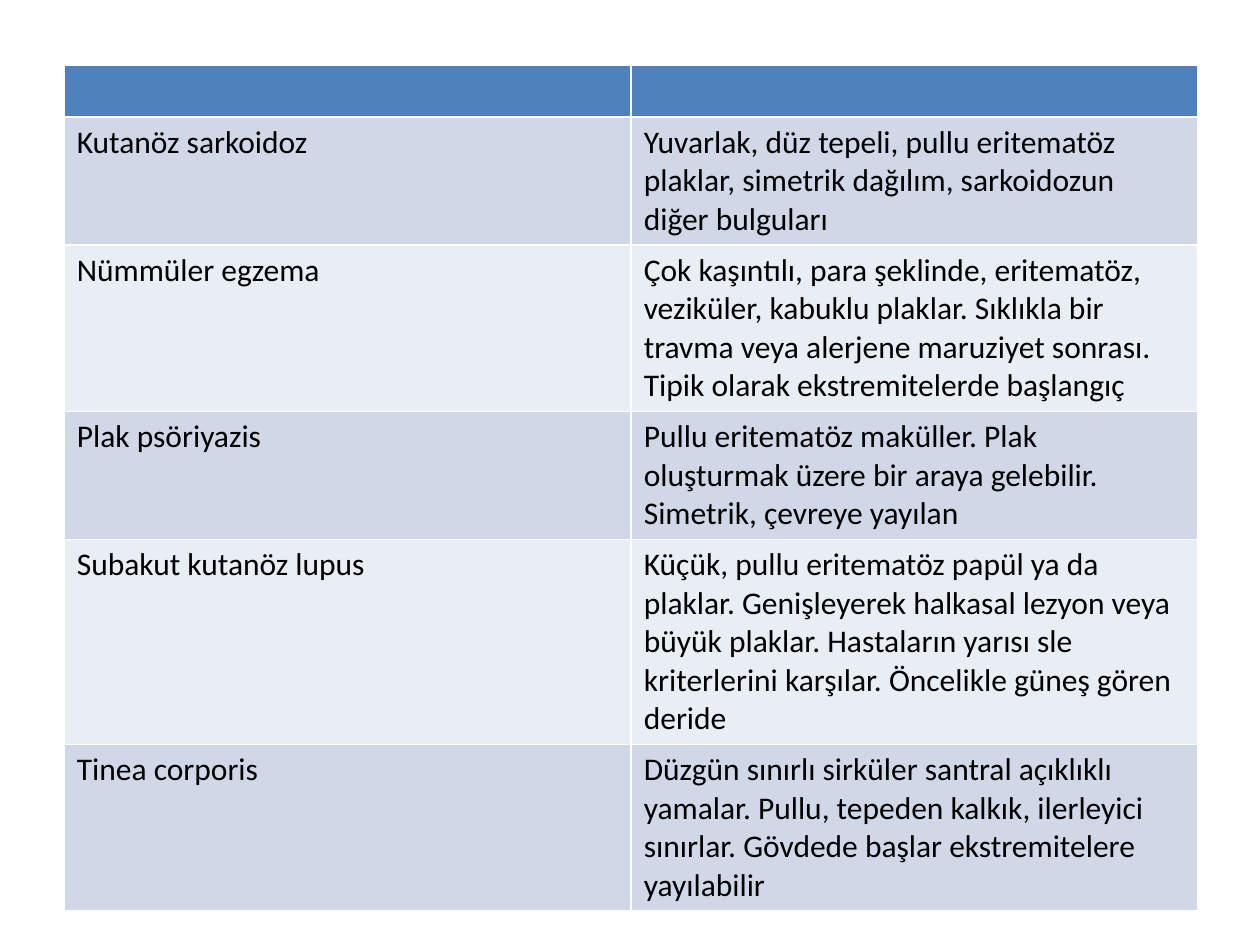
from pptx import Presentation
from pptx.dml.color import RGBColor
from pptx.util import Inches, Pt

BLUE = RGBColor(0x4F, 0x81, 0xBD)
DARK = RGBColor(0xD0, 0xD8, 0xE8)
LIGHT = RGBColor(0xE9, 0xED, 0xF4)
BLACK = RGBColor(0, 0, 0)

ROWS = [
    ("Kutanöz sarkoidoz",
     "Yuvarlak, düz tepeli, pullu eritematöz plaklar, simetrik dağılım, "
     "sarkoidozun diğer bulguları"),
    ("Nümmüler egzema",
     "Çok kaşıntılı, para şeklinde, eritematöz, veziküler, kabuklu plaklar. "
     "Sıklıkla bir travma veya alerjene maruziyet sonrası. "
     "Tipik olarak ekstremitelerde başlangıç"),
    ("Plak psöriyazis",
     "Pullu eritematöz maküller. Plak oluşturmak üzere bir araya gelebilir. "
     "Simetrik, çevreye yayılan"),
    ("Subakut kutanöz lupus",
     "Küçük, pullu eritematöz papül ya da plaklar. Genişleyerek halkasal "
     "lezyon veya büyük plaklar. Hastaların yarısı sle kriterlerini karşılar. "
     "Öncelikle güneş gören deride"),
    ("Tinea corporis",
     "Düzgün sınırlı sirküler santral açıklıklı yamalar. Pullu, tepeden "
     "kalkık, ilerleyici sınırlar. Gövdede başlar ekstremitelere yayılabilir"),
]


def write(cell, text, size=18, font="Calibri", color=BLACK):
    run = cell.text_frame.paragraphs[0].add_run()
    run.text = text
    run.font.size = Pt(size)
    run.font.name = font
    run.font.color.rgb = color


prs = Presentation()
prs.slide_width, prs.slide_height = Inches(10), Inches(7.5)
slide = prs.slides.add_slide(prs.slide_layouts[6])

# Table: the default style draws the white cell borders
frame = slide.shapes.add_table(len(ROWS) + 1, 2, Inches(0.51), Inches(0.52),
                               Inches(9), Inches(6.61))
table = frame.table

# Rows start at one line and grow with their text
for row in table.rows:
    row.height = Inches(0.41)
frame.height = Inches(6.61)

# Header band, left empty
for cell in table.rows[0].cells:
    cell.fill.solid()
    cell.fill.fore_color.rgb = BLUE

# Diseases and their findings, in alternating bands
for i, texts in enumerate(ROWS, 1):
    for cell, text in zip(table.rows[i].cells, texts):
        cell.fill.solid()
        cell.fill.fore_color.rgb = DARK if i % 2 else LIGHT
        write(cell, text)

prs.save("out.pptx")
